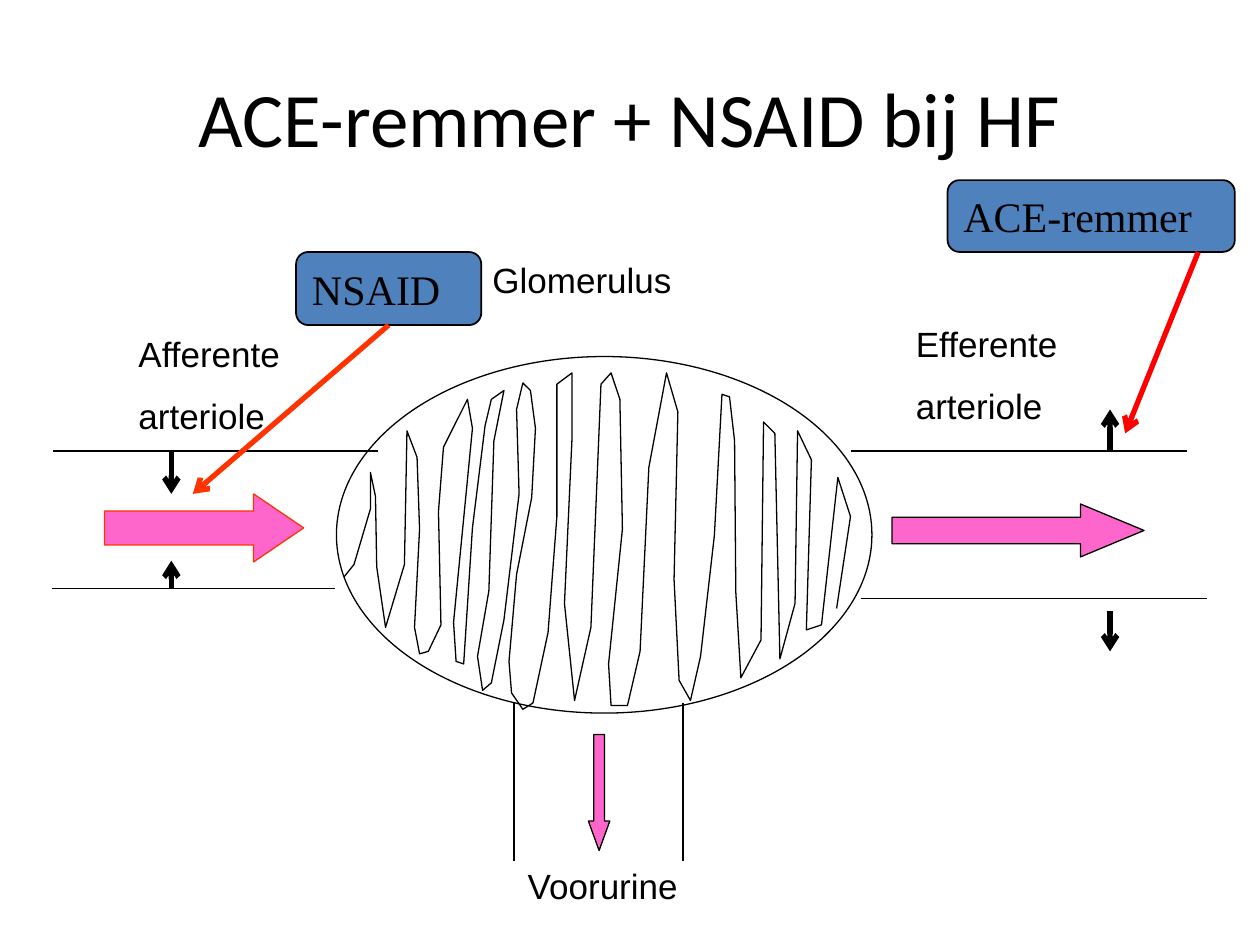
import pptx
import pptx.dml.color
import pptx.enum.shapes
import pptx.enum.text
import pptx.util
from lxml import etree
from pptx.oxml.ns import qn

Inches, Pt = pptx.util.Inches, pptx.util.Pt
SHAPE = pptx.enum.shapes.MSO_SHAPE
ALIGN = pptx.enum.text.PP_ALIGN
BLACK, PINK, BLUE = "000000", "FF66CC", "4F81BD"
ORANGE, RED = "FF3300", "FF0000"

TITLE = "ACE-remmer + NSAID bij HF"
LABELS = [
    (["Glomerulus"], 3.81, 2, 1.64, 0.44),
    (["Afferente", "arteriole"], 1, 2.58, 1.41, 0.94),
    (["Efferente", "arteriole"], 7.17, 2.5, 1.41, 0.94),
    (["Voorurine"], 4.09, 6.81, 1.4, 0.44),
]
WALLS = [
    (0.42, 3.58, 3, 3.58), (0.41, 4.67, 2.66, 4.67),
    (6.75, 3.58, 9.42, 3.58), (6.83, 4.75, 9.58, 4.75),
    (4.08, 5.58, 4.08, 6.83), (5.42, 5.58, 5.42, 6.83),
]
FLOWS = [
    (SHAPE.RIGHT_ARROW, (0.83, 3.92, 1.58, 0.54), 0.735, ORANGE),
    (SHAPE.RIGHT_ARROW, (7.08, 4, 2, 0.42), 1.2, BLACK),
    (SHAPE.DOWN_ARROW, (4.67, 5.83, 0.17, 0.92), 1.375, BLACK),
]
FORCES = [
    (1.36, 3.58, 1.36, 3.92), (1.36, 4.67, 1.36, 4.45),
    (8.81, 3.58, 8.81, 3.25), (8.81, 4.85, 8.81, 5.17),
]
DRUGS = [
    ("NSAID", (2.35, 2, 1.47, 0.58), (3.08, 2.58, 1.53, 3.92), ORANGE, True),
    ("ACE-remmer", (7.52, 1.43, 2.28, 0.57), (9.51, 2, 8.93, 3.44), RED, False),
]
COIL = [
    (2.73, 4.58), (2.81, 4.48), (2.94, 4.04), (2.94, 3.75), (2.98, 3.94),
    (2.99, 4.5), (3.06, 4.98), (3.21, 4.48), (3.23, 3.42), (3.31, 3.63),
    (3.33, 4.2), (3.29, 4.98), (3.33, 5.19), (3.4, 5.17), (3.5, 4.96),
    (3.48, 4.06), (3.52, 3.55), (3.71, 3.17), (3.75, 3.4), (3.6, 4.94),
    (3.62, 5.25), (3.68, 5.27), (3.75, 4.19), (3.85, 3.38), (3.9, 3.17),
    (4, 3.1), (3.92, 3.5), (3.88, 4.69), (3.79, 5.21), (3.83, 5.48),
    (3.9, 5.42), (4, 4.92), (4.12, 3.92), (4.1, 3.25), (4.15, 3.04),
    (4.21, 3.1), (4.25, 3.4), (4.22, 3.95), (4.1, 4.56), (4.04, 5.25),
    (4.06, 5.5), (4.15, 5.63), (4.23, 5.58), (4.35, 5.02), (4.42, 4.1),
    (4.42, 3.05), (4.54, 2.96), (4.54, 3.48), (4.48, 4.79), (4.56, 5.56),
    (4.69, 4.98), (4.77, 3.05), (4.85, 2.96), (4.92, 3.17), (4.94, 4.2),
    (4.83, 5.27), (4.85, 5.6), (4.98, 5.6), (5.08, 5.17), (5.15, 3.71),
    (5.29, 2.96), (5.38, 3.27), (5.35, 4.6), (5.39, 5.4), (5.48, 5.56),
    (5.56, 5.21), (5.67, 4.25), (5.73, 3.13), (5.79, 3.15), (5.83, 3.5),
    (5.84, 4.7), (5.88, 5.38), (6.04, 5.08), (6.06, 3.35), (6.15, 3.44),
    (6.19, 5.23), (6.31, 4.79), (6.33, 3.42), (6.44, 3.65), (6.4, 5),
    (6.52, 4.96), (6.65, 3.79), (6.75, 4.1), (6.64, 4.83),
]


def color(code):
    return pptx.dml.color.RGBColor.from_string(code)


def style(shape, fill=None, line=BLACK, width=0.75):
    shape.shadow.inherit = False
    if fill:
        shape.fill.solid()
        shape.fill.fore_color.rgb = color(fill)
    else:
        shape.fill.background()
    shape.line.color.rgb = color(line)
    shape.line.width = Pt(width)


def write(shape, lines, size, font, align=ALIGN.LEFT, wrap=True):
    frame = shape.text_frame
    frame.word_wrap = wrap
    frame.vertical_anchor = pptx.enum.text.MSO_ANCHOR.MIDDLE
    frame.text = "\n".join(lines)
    for i, para in enumerate(frame.paragraphs):
        para.alignment = align
        para.font.size = Pt(size)
        para.font.name = font
        para.font.color.rgb = color(BLACK)
        if i:
            para.space_before = Pt(11.5)


def join(shapes, ends, line=BLACK, width=0.75, head=False):
    kind = pptx.enum.shapes.MSO_CONNECTOR.STRAIGHT
    link = shapes.add_connector(kind, *map(Inches, ends))
    link.line.color.rgb = color(line)
    link.line.width = Pt(width)
    if head:
        edge = link._element.spPr.find(qn("a:ln"))
        etree.SubElement(edge, qn("a:tailEnd"), type="arrow")
    etree.SubElement(link._element.spPr, qn("a:effectLst"))
    return link


def main():
    deck = pptx.Presentation()
    deck.slide_width, deck.slide_height = Inches(10), Inches(7.5)
    shapes = deck.slides.add_slide(deck.slide_layouts[6]).shapes

    style(shapes.add_shape(SHAPE.OVAL, *map(Inches, (2.67, 2.83, 4.25, 2.83))))
    first, *rest = [(Inches(x), Inches(y)) for x, y in COIL]
    pen = shapes.build_freeform(*first)
    pen.add_line_segments(rest, close=False)
    style(pen.convert_to_shape())

    for ends in WALLS:
        join(shapes, ends)
    for lines, *place in LABELS:
        write(shapes.add_textbox(*map(Inches, place)), lines, 20, "Arial", wrap=False)
    for kind, place, tip, line in FLOWS:
        flow = shapes.add_shape(kind, *map(Inches, place))
        flow.adjustments[0] = 0.5
        flow.adjustments[1] = tip
        style(flow, PINK, line)
    for ends in FORCES:
        join(shapes, ends, width=3, head=True)
    for name, place, ends, line, glued in DRUGS:
        box = shapes.add_shape(SHAPE.ROUNDED_RECTANGLE, *map(Inches, place))
        style(box, BLUE, width=1)
        write(box, [name], 24, "Times New Roman")
        link = join(shapes, ends, line, 3, True)
        if glued:
            link.begin_connect(box, 2)

    title = shapes.add_textbox(*map(Inches, (0.5, 0.3, 9, 1.25)))
    write(title, [TITLE], 44, "Calibri", ALIGN.CENTER)
    deck.save("out.pptx")


if __name__ == "__main__":
    main()
